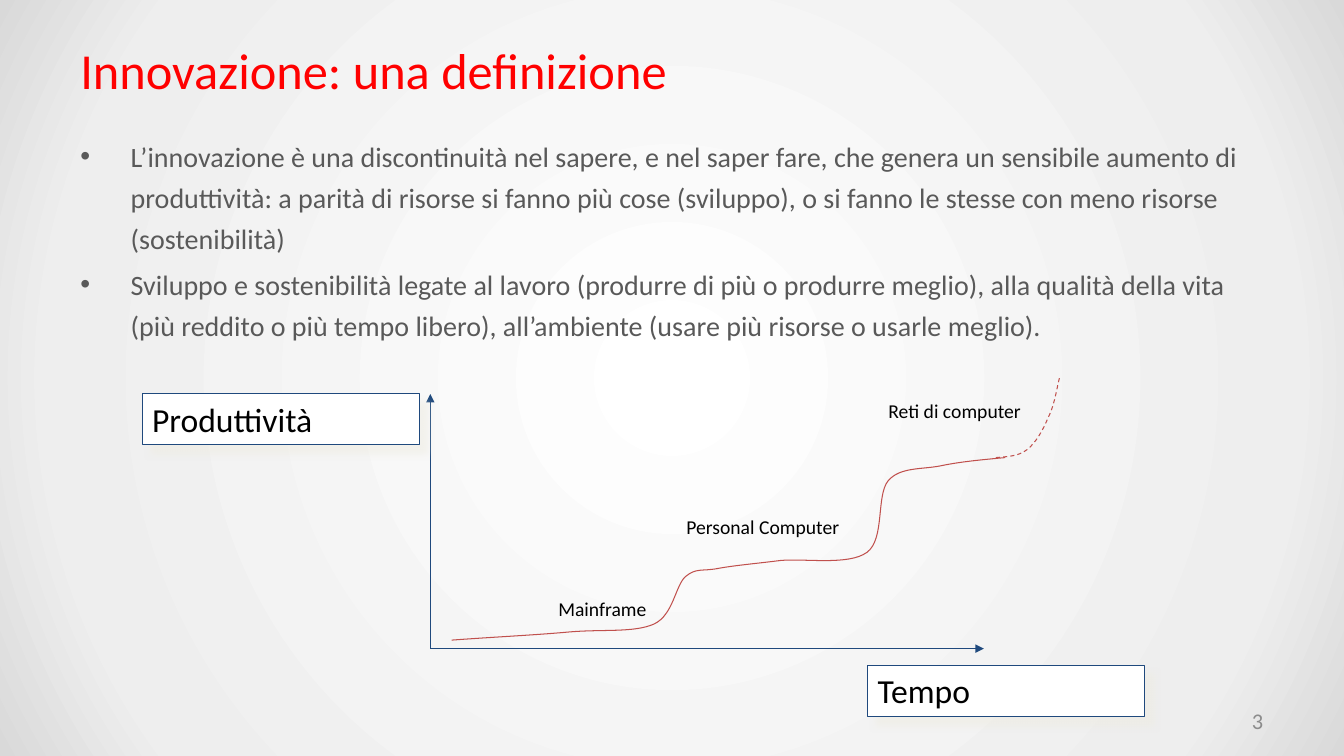
from pptx import Presentation
from pptx.dml.color import RGBColor
from pptx.enum.dml import MSO_LINE
from pptx.enum.shapes import MSO_CONNECTOR, MSO_SHAPE
from pptx.enum.text import MSO_ANCHOR as Anchor, MSO_AUTO_SIZE as AutoSize, PP_ALIGN as Align
from pptx.oxml import parse_xml
from pptx.oxml.ns import nsdecls, qn
from pptx.util import Inches, Pt

COLORS = {
    "title": "FF0000", "body": "595959", "text": "000000", "number": "8C8C8C",
    "axis": "1F497D", "curve": "C0504D", "box": "FFFFFF", "shadow": "EEECE1",
}
BACKGROUND_STOPS = [(0, "FFFFFF"), (81, "EEEEEE"), (100, "D9D9D9")]
FONT = "Calibri"

presentation = Presentation()
presentation.slide_width = Inches(13.33)
presentation.slide_height = Inches(7.5)
slide = presentation.slides.add_slide(presentation.slide_layouts[6])
shapes = slide.shapes


def share(*percents):
    """Turn alternating x and y percentages of the slide into lengths."""
    sizes = (presentation.slide_width, presentation.slide_height)
    return [round(sizes[i % 2] * value / 100) for i, value in enumerate(percents)]


def write(shape, lines, size, color, anchor=Anchor.TOP, margins=(0.1, 0.05)):
    """Fill a shape with paragraphs of one style."""
    frame = shape.text_frame
    frame.word_wrap = True
    frame.vertical_anchor = anchor
    frame.margin_left = frame.margin_right = Inches(margins[0])
    frame.margin_top = frame.margin_bottom = Inches(margins[1])
    frame.text = "\n".join(lines)
    for paragraph in frame.paragraphs:
        paragraph.alignment = Align.LEFT
        for run in paragraph.runs:
            run.font.name = FONT
            run.font.size = Pt(size)
            run.font.color.rgb = RGBColor.from_string(COLORS[color])
    return frame.paragraphs


# Background: radial gradient from the centre
slide.background.fill.gradient()
gradient = slide.background._cSld.find(".//" + qn("a:gradFill"))
stops = "".join(
    f'<a:gs pos="{position * 1000}"><a:srgbClr val="{color}"/></a:gs>'
    for position, color in BACKGROUND_STOPS)
gradient.getparent().replace(gradient, parse_xml(
    f'<a:gradFill {nsdecls("a")} rotWithShape="1"><a:gsLst>{stops}</a:gsLst>'
    '<a:path path="circle"><a:fillToRect l="50000" t="50000" r="50000" b="50000"/>'
    '</a:path></a:gradFill>'))

# Title
wide_margins = (0.13, 0.07)
title = shapes.add_textbox(*share(5, 4, 90, 10.4))
write(title, ["Innovazione: una definizione"], 36, "title", Anchor.MIDDLE, wide_margins)

# Bulleted definition
body = shapes.add_textbox(*share(5, 16.53, 90, 72.67))
definition = [
    "L’innovazione è una discontinuità nel sapere, e nel saper fare, che genera un "
    "sensibile aumento di produttività: a parità di risorse si fanno più cose "
    "(sviluppo), o si fanno le stesse con meno risorse (sostenibilità)",
    "Sviluppo e sostenibilità legate al lavoro (produrre di più o produrre meglio), "
    "alla qualità della vita (più reddito o più tempo libero), all’ambiente (usare "
    "più risorse o usarle meglio).",
]
for paragraph in write(body, definition, 20, "body", margins=wide_margins):
    paragraph.line_spacing = Pt(29.2)
    paragraph.space_before = Pt(4)
    properties = paragraph._p.get_or_add_pPr()
    properties.set("marL", str(Inches(0.5)))
    properties.set("indent", str(-Inches(0.5)))
    properties.append(parse_xml(f'<a:buFont {nsdecls("a")} typeface="Arial"/>'))
    properties.append(parse_xml(f'<a:buChar {nsdecls("a")} char="•"/>'))

# Diagram group: axes with arrowheads
diagram = shapes.add_group_shape().shapes
origin = (32.02, 85.8)
for axis_end in [(origin[0], 52.13), (73.2, origin[1])]:
    axis = diagram.add_connector(MSO_CONNECTOR.STRAIGHT, *share(*origin, *axis_end))
    axis.line.color.rgb = RGBColor.from_string(COLORS["axis"])
    axis.line.width = Pt(0.75)
    axis.line._get_or_add_ln().append(
        parse_xml(f'<a:tailEnd {nsdecls("a")} type="triangle"/>'))
    axis._element.spPr.append(parse_xml(f'<a:effectLst {nsdecls("a")}/>'))

# Axis name boxes with a soft shadow
for name, left, top in [("Tempo", 64.57, 88), ("Produttività", 10.58, 52.07)]:
    box = diagram.add_shape(MSO_SHAPE.RECTANGLE, *share(left, top, 20.6, 6.75))
    box.fill.solid()
    box.fill.fore_color.rgb = RGBColor.from_string(COLORS["box"])
    box.line.color.rgb = RGBColor.from_string(COLORS["axis"])
    box.line.width = Pt(0.75)
    box.shadow.inherit = False
    box._element.spPr.find(qn("a:effectLst")).append(parse_xml(
        f'<a:outerShdw {nsdecls("a")} blurRad="{Pt(5)}" dist="{Pt(8.5)}" dir="2700000">'
        f'<a:srgbClr val="{COLORS["shadow"]}"><a:alpha val="50000"/></a:srgbClr>'
        '</a:outerShdw>'))
    write(box, [name], 24, "text")
    box.text_frame.auto_size = AutoSize.SHAPE_TO_FIT_TEXT

# Productivity curves: a start point, then two handles and an end per Bézier segment
past = [
    (33.6, 84.67),
    (36.68, 84.27), (39.83, 84), (42.3, 83.6),
    (44.85, 83.2), (47.18, 83.73), (48.68, 82.53),
    (50.1, 81.33), (50.25, 77.47), (51, 76.27),
    (51.83, 75.07), (52.2, 75.6), (53.4, 75.2),
    (54.6, 74.8), (56.33, 74.53), (58.13, 74.13),
    (60, 73.87), (63.15, 74.8), (64.5, 73.07),
    (65.85, 71.33), (65.18, 65.6), (66.08, 63.6),
    (66.98, 61.73), (68.63, 62.13), (70.05, 61.6),
    (71.48, 61.07), (73.13, 60.8), (74.78, 60.53),
]
future = [
    (74.1, 60.53),
    (74.93, 60.4), (75.75, 60.4), (76.43, 59.47),
    (77.1, 58.53), (77.63, 56.8), (78, 55.2),
    (78.45, 53.73), (78.68, 50.93), (78.83, 50),
]
for points, dash in [(past, MSO_LINE.SOLID), (future, MSO_LINE.DASH)]:
    places = [share(*point) for point in points]
    builder = diagram.build_freeform(*places[0])
    builder.add_line_segments(places[3::3], close=False)
    curve = builder.convert_to_shape()
    # Bend each straight segment with its pair of handles
    for index, segment in enumerate(list(curve._element.iter(qn("a:lnTo")))):
        knots = "".join(
            f'<a:pt x="{x - curve.left}" y="{y - curve.top}"/>'
            for x, y in places[3 * index + 1:3 * index + 4])
        segment.getparent().replace(segment, parse_xml(
            f'<a:cubicBezTo {nsdecls("a")}>{knots}</a:cubicBezTo>'))
    curve.fill.background()
    curve.line.color.rgb = RGBColor.from_string(COLORS["curve"])
    curve.line.width = Pt(0.75)
    curve.line.dash_style = dash
    curve.shadow.inherit = False

# Labels of the three waves
for name, left, top in [("Mainframe", 40.8, 78.35), ("Reti di computer", 65.36, 52.13),
                        ("Personal Computer", 50.33, 67.47)]:
    label = diagram.add_textbox(*share(left, top, 20.63, 4.53))
    write(label, [name], 14, "text")
    label.text_frame.auto_size = AutoSize.SHAPE_TO_FIT_TEXT

# Slide number
number = shapes.add_textbox(*share(71.63, 92.67, 23.33, 5.33))
write(number, ["3"], 16, "number", Anchor.MIDDLE, wide_margins)[0].alignment = Align.RIGHT

presentation.save("out.pptx")
